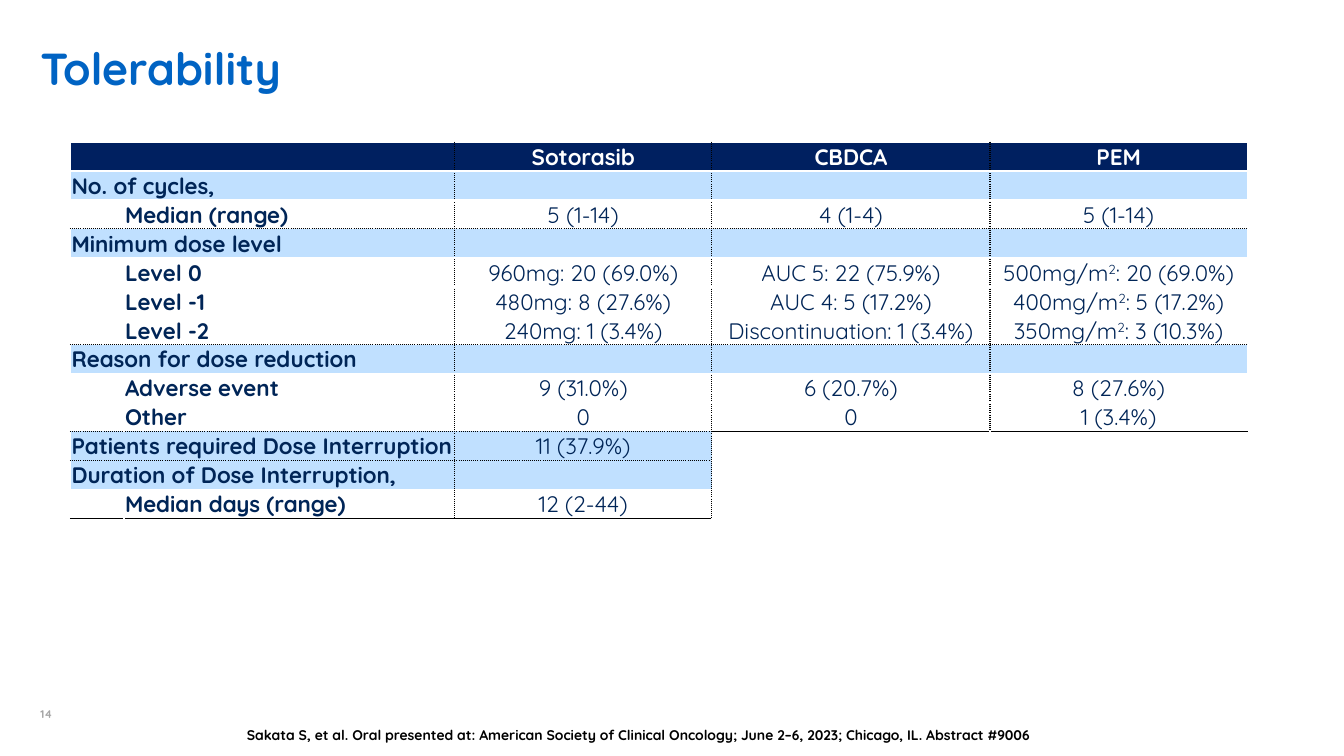
from dataclasses import dataclass

from lxml import etree
from pptx import Presentation
from pptx.dml.color import RGBColor
from pptx.enum.text import MSO_ANCHOR, PP_ALIGN
from pptx.oxml.ns import qn
from pptx.util import Inches, Pt

LEFT, CENTER = PP_ALIGN.LEFT, PP_ALIGN.CENTER
TOP, MIDDLE, BOTTOM = MSO_ANCHOR.TOP, MSO_ANCHOR.MIDDLE, MSO_ANCHOR.BOTTOM
FONT = "Quicksand"
COLORS = {"title": "0063C3", "header": "002060", "section": "C0E0FF", "text": "002557",
          "white": "FFFFFF", "black": "000000", "number": "A6A6A6"}
TITLE_ONLY = 5
TABLE_SIZE = 16
ROW_HEIGHT = 0.28
COLUMN_WIDTHS = [0.53, 3.28, 2.55, 2.76, 2.55]
LAST_FULL_ROW = 9  # below this row only the sotorasib column goes on


@dataclass
class Row:
    """A table row; values mark superscripts with a pair of carets."""
    label: str
    values: tuple[str, ...] = ()
    kind: str = "detail"
    rule: str = ""


@dataclass
class Caption:
    text: str
    place: tuple[float, float, float, float]
    size: int
    color: str
    inset: tuple[float, float]
    anchor: MSO_ANCHOR


ROWS = [
    Row("", ("Sotorasib", "CBDCA", "PEM"), "header"),
    Row("No. of cycles,", kind="section"),
    Row("Median (range)", ("5 (1-14)", "4 (1-4)", "5 (1-14)"), rule="sysDot"),
    Row("Minimum dose level", kind="section"),
    Row("Level 0", ("960mg: 20 (69.0%)", "AUC 5: 22 (75.9%)", "500mg/m^2^: 20 (69.0%)")),
    Row("Level -1", ("480mg: 8 (27.6%)", "AUC 4: 5 (17.2%)", "400mg/m^2^: 5 (17.2%)")),
    Row("Level -2", ("240mg: 1 (3.4%)", "Discontinuation: 1 (3.4%)", "350mg/m^2^: 3 (10.3%)"),
        rule="sysDot"),
    Row("Reason for dose reduction", kind="section"),
    Row("Adverse event", ("9 (31.0%)", "6 (20.7%)", "8 (27.6%)")),
    Row("Other", ("0", "0", "1 (3.4%)"), rule="sysDot"),
    Row("Patients required Dose Interruption", ("11 (37.9%)",), "section", "sysDot"),
    Row("Duration of Dose Interruption,", kind="section"),
    Row("Median days (range)", ("12 (2-44)",), rule="solid"),
]

CAPTIONS = [
    Caption("14", (0.4, 6.92, 0.45, 0.23), 8, "number", (0, 0), BOTTOM),
    Caption("Sakata S, et al. Oral presented at: American Society of Clinical Oncology; "
            "June 2–6, 2023; Chicago, IL. Abstract #9006",
            (2.35, 7.16, 8.64, 0.27), 10, "black", (0.1, 0.05), TOP),
]


def write(para, text: str, size: int, color: str, bold: bool, align: PP_ALIGN) -> None:
    para.alignment = align
    for index, part in enumerate(text.split("^")):
        if not part:
            continue
        span = para.add_run()
        span.text = part
        for name, value in {"name": FONT, "size": Pt(size), "bold": bold}.items():
            setattr(span.font, name, value)
        span.font.color.rgb = RGBColor.from_string(COLORS[color])
        if index % 2:
            span._r.get_or_add_rPr().set("baseline", "30000")


def format_frame(frame, inset: tuple[float, float], anchor: MSO_ANCHOR) -> None:
    side, end = map(Inches, inset)
    settings = {"margin_left": side, "margin_right": side, "margin_top": end,
                "margin_bottom": end, "vertical_anchor": anchor, "word_wrap": True}
    for name, value in settings.items():
        setattr(frame, name, value)


def horizontal_rule(above: int, column: int) -> str:
    """Dash of the line under row `above`, or "" for a white line."""
    if above < 0 or (column > 2 and above > LAST_FULL_ROW):
        return ""
    if column > 2 and above == LAST_FULL_ROW:
        return "solid"
    return ROWS[above].rule


def vertical_rule(row: int, left: int) -> str:
    """Dash of the line right of column `left`, or "" for a white line."""
    last = 3 if row <= LAST_FULL_ROW else 2
    return "sysDot" if 1 <= left <= last else ""


def add_borders(cell, dashes: dict[str, str]) -> None:
    properties = cell._tc.get_or_add_tcPr()
    for side, dash in dashes.items():
        line = etree.SubElement(properties, qn(f"a:ln{side}"), w=str(Pt(1)))
        fill = etree.SubElement(line, qn("a:solidFill"))
        etree.SubElement(fill, qn("a:srgbClr"), val=COLORS["black" if dash else "white"])
        etree.SubElement(line, qn("a:prstDash"), val=dash or "solid")


def format_cell(cell, row: int, column: int) -> None:
    kind = ROWS[row].kind
    merged = kind != "detail" and column == 0
    add_borders(cell, {
        "L": vertical_rule(row, column - 1),
        "R": vertical_rule(row, 1 if merged else column),
        "T": horizontal_rule(row - 1, column),
        "B": horizontal_rule(row, column),
    })
    if kind == "detail" or (column > 2 and row > LAST_FULL_ROW):
        cell.fill.background()
    else:
        cell.fill.solid()
        cell.fill.fore_color.rgb = RGBColor.from_string(COLORS[kind])
    margins = {"margin_left": 0.01, "margin_right": 0.01, "margin_top": 0.01, "margin_bottom": 0}
    for name, value in margins.items():
        setattr(cell, name, Inches(value))
    cell.vertical_anchor = MIDDLE


def add_tolerability_table(page) -> None:
    frame = page.shapes.add_table(
        len(ROWS), len(COLUMN_WIDTHS), Inches(0.7), Inches(1.41),
        Inches(sum(COLUMN_WIDTHS)), Inches(ROW_HEIGHT * len(ROWS)))
    table = frame.table
    table.first_row = table.horz_banding = False
    for column, width in zip(table.columns, COLUMN_WIDTHS):
        column.width = Inches(width)
    for index, row in enumerate(ROWS):
        table.rows[index].height = Inches(ROW_HEIGHT)
        label_column = 1 if row.kind == "detail" else 0
        texts = dict(enumerate(row.values, start=2)) | {label_column: row.label}
        color = "white" if row.kind == "header" else "text"
        for column in range(len(COLUMN_WIDTHS)):
            cell = table.cell(index, column)
            format_cell(cell, index, column)
            para = cell.text_frame.paragraphs[0]
            write(para, texts.get(column, ""), TABLE_SIZE, color,
                  column < 2 or row.kind == "header", LEFT if column < 2 else CENTER)
            etree.SubElement(para._p, qn("a:endParaRPr"), sz=str(TABLE_SIZE * 100))
        if row.kind != "detail":
            table.cell(index, 0).merge(table.cell(index, 1))


def add_title(page) -> None:
    title = page.shapes.title
    place = {"left": 0.4, "top": 0.4, "width": 12.53, "height": 0.54}
    for name, value in place.items():
        setattr(title, name, Inches(value))
    format_frame(title.text_frame, (0, 0), MIDDLE)
    write(title.text_frame.paragraphs[0], "Tolerability", 32, "title", True, LEFT)


def add_caption(page, caption: Caption) -> None:
    box = page.shapes.add_textbox(*map(Inches, caption.place))
    format_frame(box.text_frame, caption.inset, caption.anchor)
    write(box.text_frame.paragraphs[0], caption.text, caption.size, caption.color, True, LEFT)


def main() -> None:
    deck = Presentation()
    deck.slide_width, deck.slide_height = Inches(13.33), Inches(7.5)
    page = deck.slides.add_slide(deck.slide_layouts[TITLE_ONLY])
    add_title(page)
    add_tolerability_table(page)
    for caption in CAPTIONS:
        add_caption(page, caption)
    deck.save("out.pptx")


if __name__ == "__main__":
    main()
